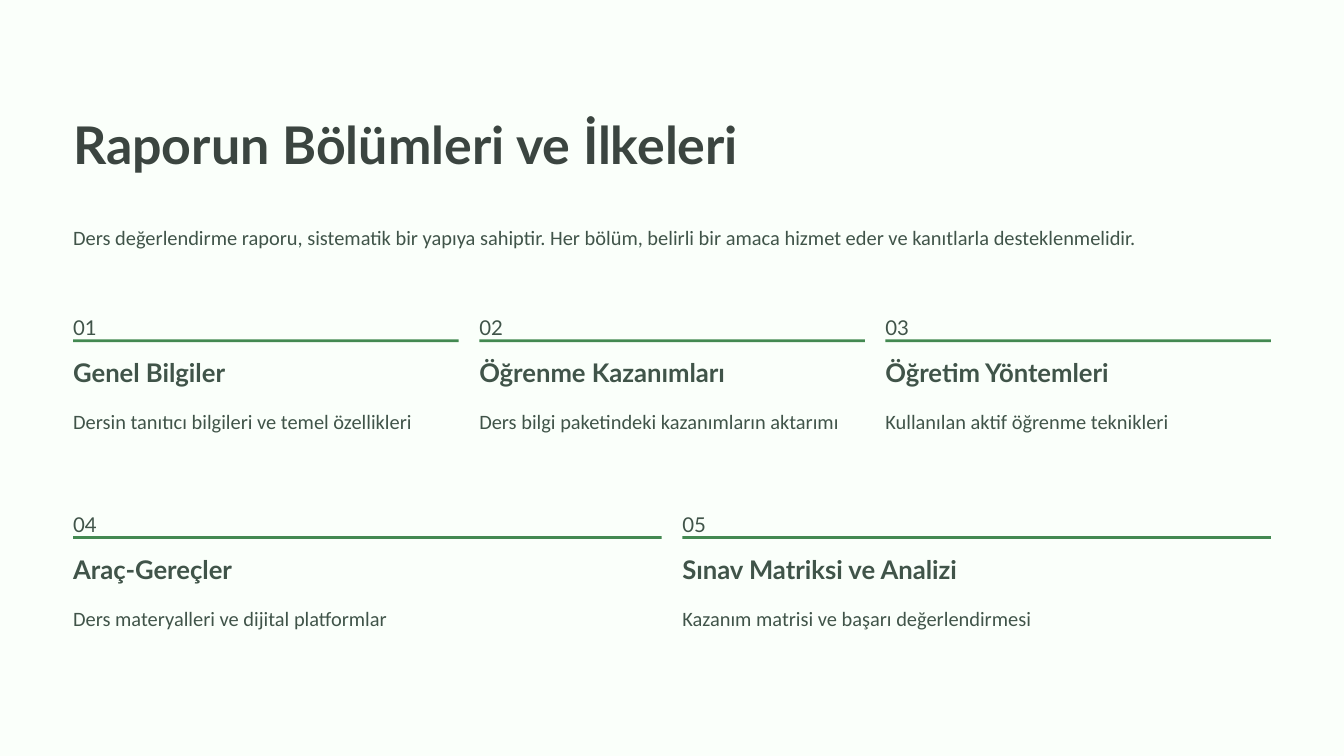
from dataclasses import dataclass

from pptx import Presentation
from pptx.dml.color import RGBColor
from pptx.enum.shapes import MSO_SHAPE
from pptx.slide import Slide
from pptx.util import Pt

RECT = MSO_SHAPE.RECTANGLE
PAPER = RGBColor(0xFA, 0xFF, 0xFA)
DARK = RGBColor(0x3B, 0x45, 0x40)
INK = RGBColor(0x40, 0x54, 0x49)
GREEN = RGBColor(0x43, 0x89, 0x51)

PAGE_W, PAGE_H = 1152, 648
LEFT, WIDTH, GAP = 62.7, 1026.7, 17.6
TOP, PITCH = 262.8, 168.7


@dataclass(frozen=True)
class Style:
    font: str
    size: float
    line: float
    color: RGBColor = INK
    bold: bool = False


@dataclass(frozen=True)
class Part:
    title: str
    body: str


TITLE = Style("Lato", 44.5, 55.5, DARK, True)
HEAD = Style("Lato", 22, 27.5, bold=True)
LABEL = Style("Lato", 17.5, 28.5)
BODY = Style("Calibri", 17.5, 28.5)

ROWS = [
    [
        Part("Genel Bilgiler", "Dersin tanıtıcı bilgileri ve temel özellikleri"),
        Part("Öğrenme Kazanımları", "Ders bilgi paketindeki kazanımların aktarımı"),
        Part("Öğretim Yöntemleri", "Kullanılan aktif öğrenme teknikleri"),
    ],
    [
        Part("Araç-Gereçler", "Ders materyalleri ve dijital platformlar"),
        Part("Sınav Matriksi ve Analizi", "Kazanım matrisi ve başarı değerlendirmesi"),
    ],
]


def add_text(slide: Slide, text: str, style: Style, x: float, y: float,
             w: float, h: float, wrap: bool = False) -> None:
    box = slide.shapes.add_textbox(Pt(x), Pt(y), Pt(w), Pt(h))
    frame = box.text_frame
    frame.margin_left = frame.margin_right = 0
    frame.margin_top = frame.margin_bottom = 0
    frame.word_wrap = wrap
    frame.text = text
    para = frame.paragraphs[0]
    para.line_spacing = Pt(style.line)
    font = para.runs[0].font
    font.name = style.font
    font.size = Pt(style.size)
    font.bold = style.bold
    font.color.rgb = style.color


def add_rect(slide: Slide, color: RGBColor, x: float, y: float,
             w: float, h: float) -> None:
    rect = slide.shapes.add_shape(RECT, Pt(x), Pt(y), Pt(w), Pt(h))
    rect.shadow.inherit = False
    rect.fill.solid()
    rect.fill.fore_color.rgb = color
    rect.line.fill.background()


def add_part(slide: Slide, part: Part, num: int, x: float, y: float, w: float) -> None:
    add_text(slide, f"{num:02d}", LABEL, x, y, 24, 22.3)
    add_rect(slide, GREEN, x, y + 28, w, 2.4)
    add_text(slide, part.title, HEAD, x, y + 41.8, 250, 28)
    add_text(slide, part.body, BODY, x, y + 80.6, w, 57, True)


def main() -> None:
    deck = Presentation()
    deck.slide_width, deck.slide_height = Pt(PAGE_W), Pt(PAGE_H)
    slide = deck.slides.add_slide(deck.slide_layouts[6])
    add_rect(slide, PAPER, 0, 0, PAGE_W, PAGE_H)

    add_text(slide, "Raporun Bölümleri ve İlkeleri", TITLE, LEFT, 94.3, 675, 56)
    add_text(slide, "Ders değerlendirme raporu, sistematik bir yapıya sahiptir. "
             "Her bölüm, belirli bir amaca hizmet eder ve kanıtlarla desteklenmelidir.",
             BODY, LEFT, 185.8, WIDTH, 57, True)

    num = 0
    for row, parts in enumerate(ROWS):
        w = (WIDTH - GAP * (len(parts) - 1)) / len(parts)
        for col, part in enumerate(parts):
            num += 1
            add_part(slide, part, num, LEFT + col * (w + GAP), TOP + row * PITCH, w)

    deck.save("out.pptx")


if __name__ == "__main__":
    main()
